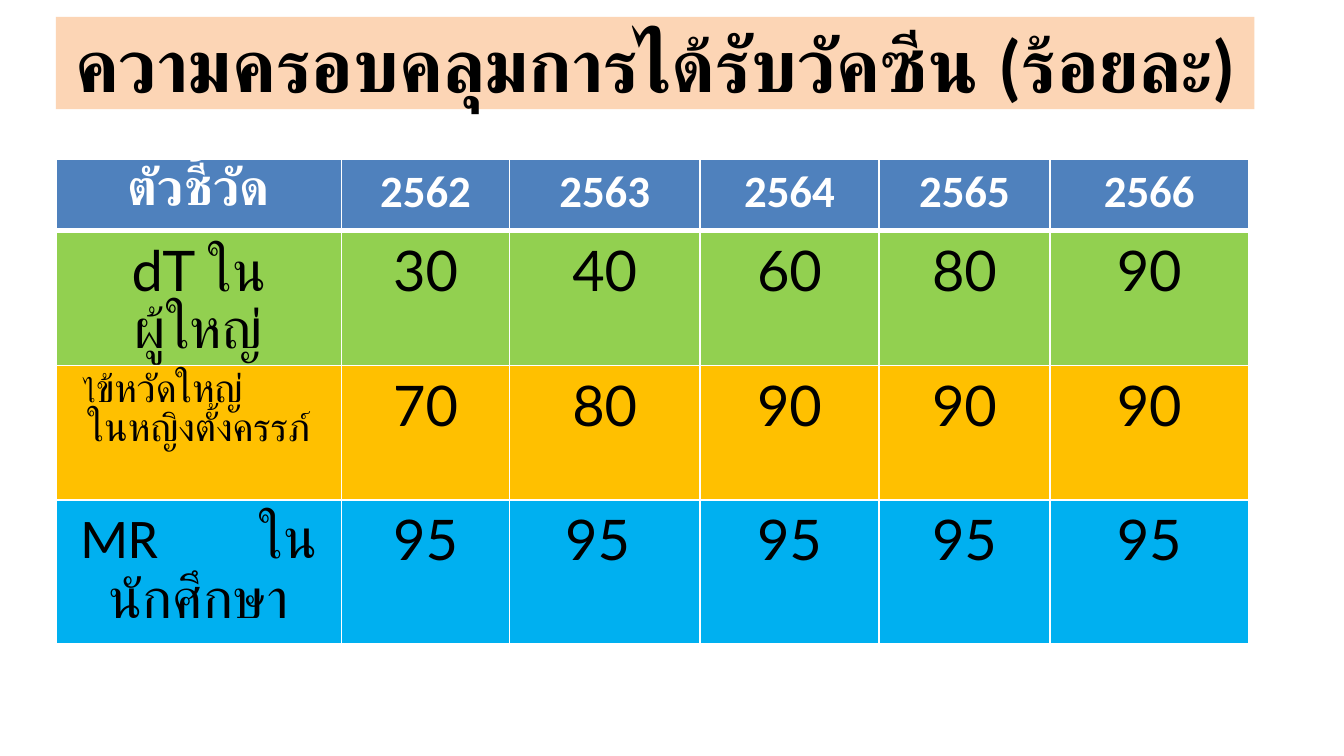
from dataclasses import dataclass

from lxml.etree import Element, SubElement
from pptx import Presentation
from pptx.dml.color import RGBColor
from pptx.enum.shapes import MSO_SHAPE
from pptx.enum.text import MSO_ANCHOR, PP_ALIGN
from pptx.oxml.ns import qn
from pptx.util import Pt

PX = 9525


@dataclass(frozen=True)
class Theme:
    peach: str = "FCD5B5"
    head: str = "4F81BD"
    rows: tuple = ("92D050", "FFC000", "00B0F0")
    black: str = "000000"
    white: str = "FFFFFF"
    font: str = "Calibri"
    body: str = "Lato"
    title: float = 39.6
    label: int = 27
    year: int = 24
    value: int = 30
    small: int = 21
    tiny: int = 15
    rule: int = 3


THEME = Theme()
COLS = (204, 120, 136, 128, 122, 142)
ROWS = (51, 93, 96, 103)
YEARS = ("2562", "2563", "2564", "2565", "2566")
DATA = (
    ("dT ในผู้ใหญ่", ("30", "40", "60", "80", "90")),
    ("ไ", ("70", "80", "90", "90", "90")),
    ("MR\tใน\vนักศึกษา", ("95", "95 ", "95", "95", "95")),
)


def px(*sizes):
    return [size * PX for size in sizes]


def paint(shape, color):
    shape.fill.solid()
    shape.fill.fore_color.rgb = RGBColor.from_string(color)


def style(run, size, color, font, bold=False):
    run.font.size = Pt(size)
    run.font.name = font
    run.font.bold = bold
    run.font.color.rgb = RGBColor.from_string(color)


def write(frame, text, *look):
    frame.text = text
    para = frame.paragraphs[0]
    para.alignment = PP_ALIGN.CENTER
    for run in para.runs:
        style(run, *look)


def add_title(slide, box):
    band = slide.shapes.add_shape(MSO_SHAPE.RECTANGLE, *px(*box))
    band.shadow.inherit = False
    paint(band, THEME.peach)
    band.line.fill.background()
    frame = band.text_frame
    frame.word_wrap = False
    frame.vertical_anchor = MSO_ANCHOR.MIDDLE
    write(frame, "ความครอบคลุมการได้รับวัคซีน (ร้อยละ)",
          THEME.title, THEME.black, THEME.font, True)


def fill_cell(cell, text, color, *look):
    paint(cell, color)
    cell.margin_top = cell.margin_bottom = 4 * PX
    write(cell.text_frame, text, *look)


def add_rule(cell):
    line = Element(qn("a:lnB"), w=str(Pt(THEME.rule)))
    fill = SubElement(line, qn("a:solidFill"))
    SubElement(fill, qn("a:srgbClr"), val=THEME.white)
    cell._tc.get_or_add_tcPr().insert(0, line)


def add_tab(para, left):
    tabs = SubElement(para._p.get_or_add_pPr(), qn("a:tabLst"))
    SubElement(tabs, qn("a:tab"), pos=str(left * PX), algn="l")


def finish_flu(para):
    para.runs[0].font.size = Pt(THEME.tiny)
    for i, text in enumerate(("ข้หวัดใหญ่\t", "ในหญิงตั้งครรภ์")):
        if i:
            para.add_line_break()
        run = para.add_run()
        run.text = text
        style(run, THEME.small, THEME.black, THEME.body)
    add_tab(para, 164)


def finish_rubella(para):
    add_tab(para, 128)
    for run in para.runs:
        run.font.name = THEME.font


def add_grid(slide, box):
    table = slide.shapes.add_table(len(ROWS), len(COLS), *px(*box)).table
    for col, width in zip(table.columns, COLS):
        col.width = width * PX
    for row, height in zip(table.rows, ROWS):
        row.height = height * PX
    for i, text in enumerate(("ตัวชี้วัด", *YEARS)):
        size = THEME.year if i else THEME.label
        fill_cell(table.cell(0, i), text, THEME.head,
                  size, THEME.white, THEME.font, True)
        add_rule(table.cell(0, i))
    for r, ((label, values), color) in enumerate(zip(DATA, THEME.rows), 1):
        for i, text in enumerate((label, *values)):
            fill_cell(table.cell(r, i), text, color,
                      THEME.value, THEME.black, THEME.body)
    finish_flu(table.cell(2, 0).text_frame.paragraphs[0])
    finish_rubella(table.cell(3, 0).text_frame.paragraphs[0])


def main():
    deck = Presentation()
    deck.slide_width, deck.slide_height = px(960, 540)
    slide = deck.slides.add_slide(deck.slide_layouts[6])
    add_title(slide, (40, 12, 856, 66))
    add_grid(slide, (40, 114, sum(COLS), sum(ROWS)))
    deck.save("out.pptx")


if __name__ == "__main__":
    main()
